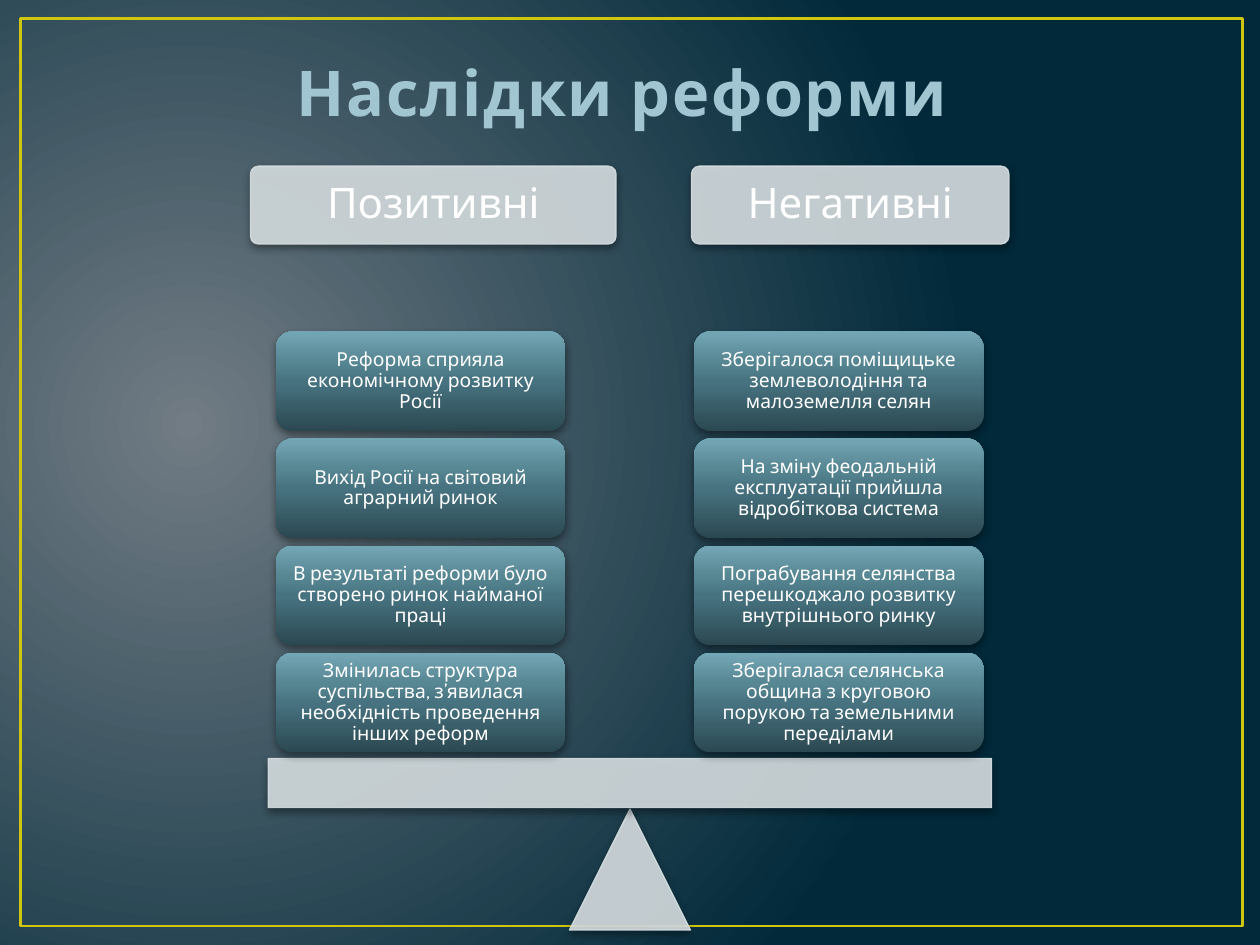
from lxml import etree
from pptx import Presentation
from pptx.dml.color import RGBColor
from pptx.enum.shapes import MSO_SHAPE
from pptx.enum.text import MSO_ANCHOR, PP_ALIGN
from pptx.oxml import parse_xml
from pptx.oxml.ns import nsdecls, qn
from pptx.util import Cm, Pt

RECT, ROUND, TRIANGLE = MSO_SHAPE.RECTANGLE, MSO_SHAPE.ROUNDED_RECTANGLE, MSO_SHAPE.ISOSCELES_TRIANGLE
MIDDLE, BOTTOM, CENTER = MSO_ANCHOR.MIDDLE, MSO_ANCHOR.BOTTOM, PP_ALIGN.CENTER

THEME = {
    "font": "Cabin",
    "frame": "CFC60D",
    "pale": "D6DEE1",
    "text": "FFFFFF",
    "title": "4AB1D0",
    "title_outline": "A2C5D2",
    "background": [(0, "717C84"), (100, "01293A")],
    "card": [(0, "2B4851"), (50, "477380"), (70, "588794"), (100, "74A7B6")],
    "title_size": 36,
    "header_size": 24,
    "card_size": 11,
}
COLUMNS = [
    {"header": "Позитивні", "header_left": 5.05, "header_width": 7.37, "card_left": 5.56,
     "cards": ["Реформа сприяла економічному розвитку Росії",
               "Вихід Росії на світовий аграрний ринок",
               "В результаті реформи було створено ринок найманої праці",
               "Змінилась структура суспільства, з’явилася необхідність проведення інших реформ"]},
    {"header": "Негативні", "header_left": 13.94, "header_width": 6.4, "card_left": 13.99,
     "cards": ["Зберігалося поміщицьке землеволодіння та малоземелля селян",
               "На зміну феодальній експлуатації прийшла відробіткова система",
               "Пограбування селянства перешкоджало розвитку внутрішнього ринку",
               "Зберігалася селянська община з круговою порукою та земельними переділами"]},
]
CARD_TOP, CARD_STEP, CARD_WIDTH, CARD_HEIGHT = 6.68, 2.16, 5.84, 2.01


def set_gradient(fill, parent, stops, direction):
    """Give parent a multi-stop gradient; direction is its a:lin or a:path XML."""
    fill.solid()
    gs = "".join(f'<a:gs pos="{pos * 1000}"><a:srgbClr val="{color}"/></a:gs>' for pos, color in stops)
    solid = parent.find(qn("a:solidFill"))
    parent.replace(solid, parse_xml(
        f'<a:gradFill {nsdecls("a")} rotWithShape="1"><a:gsLst>{gs}</a:gsLst>{direction}</a:gradFill>'))


def add_block(kind, box, text="", size=0, inset=0, gradient=None):
    """Add a shadowed shape, pale and slightly transparent unless a gradient is given."""
    s = slide.shapes.add_shape(kind, *map(Cm, box))
    sp_pr = s._element.spPr
    if gradient:
        set_gradient(s.fill, sp_pr, gradient, '<a:lin ang="16200000" scaled="0"/>')
        s.line.fill.background()
    else:
        s.fill.solid()
        s.line.width = Pt(0.75)
        for color in (s.fill.fore_color, s.line.color):
            color.rgb = RGBColor.from_string(THEME["pale"])
        for color in sp_pr.iter(qn("a:srgbClr")):
            etree.SubElement(color, qn("a:alpha"), val="90000")
    s.shadow.inherit = False
    sp_pr.find(qn("a:effectLst")).append(parse_xml(
        f'<a:outerShdw {nsdecls("a")} blurRad="{Pt(5)}" dist="{Pt(2)}" dir="5400000" rotWithShape="0">'
        '<a:srgbClr val="000000"><a:alpha val="43000"/></a:srgbClr></a:outerShdw>'))
    if text:
        tf = s.text_frame
        frame_format = {"word_wrap": True, "vertical_anchor": MIDDLE}
        for side in ("left", "top", "right", "bottom"):
            frame_format[f"margin_{side}"] = Cm(inset)
        for name, value in frame_format.items():
            setattr(tf, name, value)
        p = tf.paragraphs[0]
        p.alignment, p.line_spacing = CENTER, 0.9
        r = p.add_run()
        r.text = text
        r.font.name, r.font.size = THEME["font"], Pt(size)
        r.font.color.rgb = RGBColor.from_string(THEME["text"])
    return s


prs = Presentation()
prs.slide_width, prs.slide_height = Cm(25.4), Cm(19.05)
slide = prs.slides.add_slide(prs.slide_layouts[6])

# Background and frame
fill = slide.background.fill
fill.solid()
bg_pr = slide._element.find(".//" + qn("p:bgPr"))
set_gradient(fill, bg_pr, THEME["background"],
             '<a:path path="circle"><a:fillToRect l="15000" t="50000" r="85000" b="60000"/></a:path>')
frame = slide.shapes.add_shape(RECT, Cm(0.41), Cm(0.38), Cm(24.64), Cm(18.29))
frame.fill.background()
frame.line.color.rgb = RGBColor.from_string(THEME["frame"])
frame.line.width = Pt(1.5)
frame.shadow.inherit = False

# Title: nearly clear letters with a pale outline
title = slide.shapes.add_textbox(Cm(1.27), Cm(0.76), Cm(22.86), Cm(1.96))
tf = title.text_frame
tf.word_wrap, tf.vertical_anchor = True, BOTTOM
p = tf.paragraphs[0]
p.alignment = CENTER
r = p.add_run()
r.text = "Наслідки реформи "
for name, value in {"name": THEME["font"], "size": Pt(THEME["title_size"]), "bold": True}.items():
    setattr(r.font, name, value)
r.font.color.rgb = RGBColor.from_string(THEME["title"])
r_pr = r._r.get_or_add_rPr()
r_pr.set("spc", "100")
etree.SubElement(r_pr.find(".//" + qn("a:srgbClr")), qn("a:alpha"), val="6000")
r_pr.insert(0, parse_xml(
    f'<a:ln {nsdecls("a")} w="{Pt(1.42)}"><a:solidFill><a:srgbClr val="{THEME["title_outline"]}"/>'
    '</a:solidFill></a:ln>'))

# Scales: headers, pivot, beam, then the stacked cards
for column in COLUMNS:
    header = add_block(ROUND, (column["header_left"], 3.35, column["header_width"], 1.57),
                       column["header"], THEME["header_size"], 0.25)
    header.adjustments[0] = 0.1
add_block(TRIANGLE, (11.48, 16.31, 2.44, 2.44))
add_block(RECT, (5.41, 15.29, 14.58, 0.99))
for column in COLUMNS:
    for row, text in enumerate(column["cards"]):
        add_block(ROUND, (column["card_left"], CARD_TOP + row * CARD_STEP, CARD_WIDTH, CARD_HEIGHT),
                  text, THEME["card_size"], 0.13, THEME["card"])

prs.save("out.pptx")
